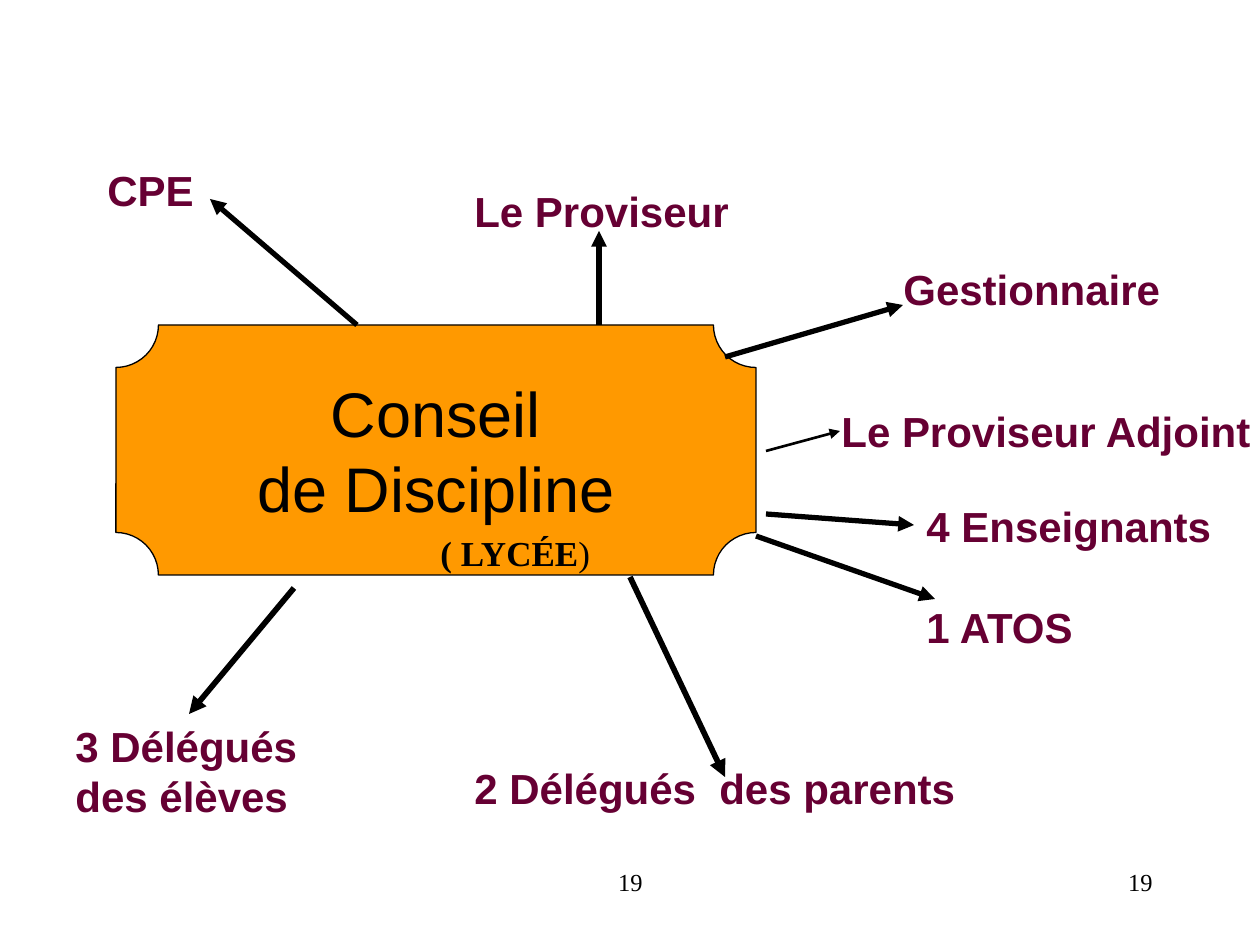
from lxml import etree
from pptx import Presentation
from pptx import util as u
from pptx.dml.color import RGBColor
from pptx.enum import shapes, text
from pptx.oxml.ns import qn

SCALE = u.Inches(1) / 126
COLORS = {"black": "000000", "orange": "FF9900", "plum": "660033"}
FORMATS = {
    "title": {"name": "Arial", "size": u.Pt(36), "bold": False},
    "member": {"name": "Arial", "size": u.Pt(24), "bold": True},
    "school": {"name": "Times New Roman", "size": u.Pt(20), "bold": True},
    "number": {"name": "Times New Roman", "size": u.Pt(14), "bold": False},
}


def px(*values):
    return [round(value * SCALE) for value in values]


def write(shape, lines, style, color, align=text.PP_ALIGN.LEFT, wrap=True, gap=0):
    frame = shape.text_frame
    frame.word_wrap = wrap
    for index, line in enumerate(lines):
        paragraph = frame.paragraphs[0] if index == 0 else frame.add_paragraph()
        paragraph.alignment = align
        if index:
            paragraph.space_before = u.Pt(gap)
        run = paragraph.add_run()
        run.text = line
        for name, value in FORMATS[style].items():
            setattr(run.font, name, value)
        run.font.color.rgb = RGBColor.from_string(COLORS[color])


presentation = Presentation()
presentation.slide_width, presentation.slide_height = px(1260, 945)
slide = presentation.slides.add_slide(presentation.slide_layouts[6])

numbers = [
    ((431, 861, 399, 63), text.PP_ALIGN.CENTER),
    ((903, 861, 262, 63), text.PP_ALIGN.RIGHT),
]
for place, align in numbers:
    write(slide.shapes.add_textbox(*px(*place)), ["19"], "number", "black", align)

council = slide.shapes.add_shape(shapes.MSO_SHAPE.PLAQUE, *px(116, 325, 640, 250))
council.shadow.inherit = False
council.adjustments[0] = 0.17
council.fill.solid()
council.fill.fore_color.rgb = RGBColor.from_string(COLORS["orange"])
council.line.color.rgb = RGBColor.from_string(COLORS["black"])
council.line.width = u.Pt(0.75)
council.text_frame.vertical_anchor = text.MSO_ANCHOR.MIDDLE
write(council, ["Conseil", "de Discipline"], "title", "black", text.PP_ALIGN.CENTER, False)

members = [
    ((462, 179, 301, 63), ["Le Proviseur"], True, 0),
    ((891, 257, 282, 63), ["Gestionnaire"], False, 0),
    ((95, 158, 204, 63), ["CPE"], True, 0),
    ((914, 494, 346, 164), ["4 Enseignants", "1 ATOS"], True, 29),
    ((462, 756, 507, 63), ["2 Délégués  des parents"], True, 0),
    ((63, 714, 247, 113), ["3 Délégués", "des élèves"], False, 0),
    ((829, 399, 591, 63), ["Le Proviseur Adjoint"], True, 0),
]
for place, lines, wrap, gap in members:
    box = slide.shapes.add_textbox(*px(*place))
    write(box, lines, "member", "plum", wrap=wrap, gap=gap)

school = slide.shapes.add_textbox(*px(428, 525, 180, 54))
write(school, ["( LYCÉE"], "school", "black")
bracket = school.text_frame.paragraphs[0].add_run()
bracket.text = ")"
for name, value in {**FORMATS["school"], "bold": False}.items():
    setattr(bracket.font, name, value)
bracket.font.color.rgb = RGBColor.from_string(COLORS["black"])

arrows = [
    ((630, 577, 725, 777), 3.25),
    ((756, 536, 935, 599), 3),
    ((766, 514, 914, 525), 3),
    ((725, 357, 903, 305), 3),
    ((599, 325, 599, 231), 3),
    ((294, 588, 189, 714), 3.25),
    ((357, 325, 210, 199), 3),
    ((766, 451, 840, 431), 1.5),
]
for ends, width in arrows:
    arrow = slide.shapes.add_connector(shapes.MSO_CONNECTOR.STRAIGHT, *px(*ends))
    arrow.line.color.rgb = RGBColor.from_string(COLORS["black"])
    arrow.line.width = u.Pt(width)
    etree.SubElement(arrow.line._get_or_add_ln(), qn("a:tailEnd"), type="triangle")
    etree.SubElement(arrow._element.spPr, qn("a:effectLst"))

presentation.save("out.pptx")
